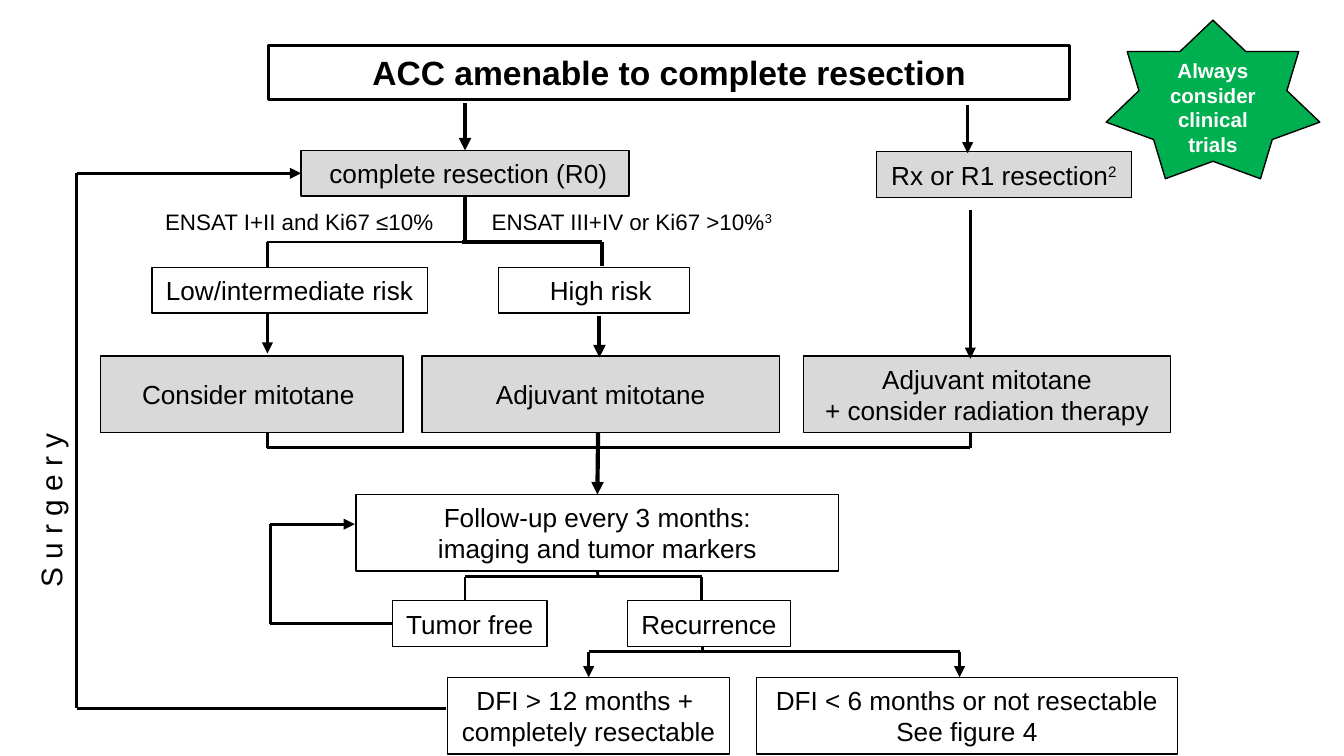
from dataclasses import dataclass
from typing import Any

from lxml.etree import SubElement
from pptx import Presentation
from pptx.dml.color import RGBColor
from pptx.enum.shapes import MSO_CONNECTOR as Connector, MSO_SHAPE as Shape
from pptx.enum.text import MSO_ANCHOR as Anchor, PP_ALIGN as Align
from pptx.oxml.ns import qn
from pptx.util import Inches, Pt

TOP, LEFT, BOTTOM = 0, 1, 2


@dataclass(frozen=True)
class Theme:
    """Colours, type sizes and line widths of the flow chart."""
    font: str = "Arial"
    ink: RGBColor = RGBColor(0, 0, 0)
    paper: RGBColor = RGBColor(255, 255, 255)
    grey: RGBColor = RGBColor(0xD9, 0xD9, 0xD9)
    green: RGBColor = RGBColor(0, 0xB0, 0x50)
    heading: float = 18
    side: float = 16
    body: float = 14
    label: float = 12
    badge: float = 11
    hairline: float = 0.75
    normal: float = 1.5
    heavy: float = 2.25


THEME = Theme()


def cells(count):
    """Turn grid cells, a tenth of an inch each, into a length."""
    return Inches(count / 10)


@dataclass
class Area:
    """A box on the slide grid; its parts are placed from its top left corner."""
    slide: Any
    left: float
    top: float
    width: float
    height: float

    def frame(self, x, y, width, height):
        """Give the slide position and size of a part."""
        return [cells(n) for n in (self.left + x, self.top + y, width, height)]

    def box(self, text, x, y, width, height, fill=THEME.paper, kind=Shape.RECTANGLE,
            line=THEME.hairline, wrap=False, **style):
        """Add a filled, outlined shape with centred text."""
        shape = self.slide.shapes.add_shape(kind, *self.frame(x, y, width, height))
        shape.shadow.inherit = False
        shape.fill.solid()
        shape.fill.fore_color.rgb = fill
        shape.line.color.rgb = THEME.ink
        shape.line.width = Pt(line)
        write(shape.text_frame, text, wrap, **style)
        return shape

    def label(self, text, x, y, width, height, **style):
        """Add a free-standing line of text."""
        shape = self.slide.shapes.add_textbox(*self.frame(x, y, width, height))
        write(shape.text_frame, text, False, align=Align.LEFT, **style)
        return shape

    def route(self, *points, weight=THEME.normal, arrow=False, start=None, end=None):
        """Join the points by straight lines, with an arrowhead at the last."""
        last = len(points) - 2
        for index, (first, second) in enumerate(zip(points, points[1:])):
            x1, y1 = self.frame(*first, 0, 0)[:2]
            x2, y2 = self.frame(*second, 0, 0)[:2]
            line = self.slide.shapes.add_connector(Connector.STRAIGHT, x1, y1, x2, y2)
            line.line.color.rgb = THEME.ink
            line.line.width = Pt(weight)
            if start and index == 0:
                line.begin_connect(*start)
            if end and index == last:
                line.end_connect(*end)
            if arrow and index == last:
                SubElement(line.line._get_or_add_ln(), qn("a:tailEnd"), type="triangle")
            SubElement(line._element.spPr, qn("a:effectLst"))


def write(frame, text, wrap, size=THEME.body, color=THEME.ink, bold=False, raised="",
          align=Align.CENTER, anchor=Anchor.MIDDLE):
    """Fill a text frame, one paragraph a line, with an optional raised mark."""
    frame.word_wrap = wrap
    frame.vertical_anchor = anchor
    for index, content in enumerate(text.split("\n")):
        paragraph = frame.paragraphs[0] if index == 0 else frame.add_paragraph()
        paragraph.alignment = align
        for part in filter(None, (content, raised)):
            run = paragraph.add_run()
            run.text = part
            run.font.name = THEME.font
            run.font.size = Pt(size)
            run.font.bold = bold
            run.font.color.rgb = color
            if part == raised:
                run.font._element.set("baseline", "30000")


def draw_resection(area):
    """Draw the heading and the two results of surgery; return the complete one."""
    area.box("ACC amenable to complete resection", 0, 0, 59.6, 4, line=THEME.normal,
             size=THEME.heading, bold=True)
    complete = area.box("complete resection (R0)", 2.4, 7.8, 24.4, 3.4, THEME.grey)
    complete.text_frame.margin_left = Inches(0.15)
    area.box("Rx or R1 resection", 45.2, 7.9, 19, 3.4, THEME.grey, raised="2")
    area.route((14.6, 4.3), (14.6, 7.8), weight=THEME.heavy, arrow=True, end=(complete, TOP))
    area.route((52, 4.4), (52, 8), arrow=True)
    return complete


def draw_risk(area, complete):
    """Split the complete resections into two risk groups."""
    area.label("ENSAT I+II and Ki67 ≤10%", 0, 0.4, 22.8, 3, size=THEME.label)
    area.label("ENSAT III+IV or Ki67 >10%", 24.3, 0.4, 23.2, 3, size=THEME.label, raised="3")
    area.box("Low/intermediate risk", 0, 5.3, 20.5, 3.4)
    high = area.box("High risk", 25.8, 5.3, 14.2, 3.4)
    high.text_frame.margin_left = Inches(0.2)
    area.route((23.3, 3.4), (8.6, 3.4), (8.6, 5.3))
    area.route((23.3, 0), (23.3, 3.4), weight=THEME.heavy, start=(complete, BOTTOM))
    area.route((23.1, 3.4), (33.5, 3.4), (33.5, 5.2), weight=THEME.heavy)


def draw_treatment(area):
    """Draw the three treatments, the arrows into them and the line below."""
    treatments = (("Consider mitotane ", 0, 22.5), ("Adjuvant mitotane", 23.9, 26.6),
                  ("Adjuvant mitotane\n+ consider radiation therapy", 52.3, 27.3))
    for text, x, width in treatments:
        area.box(text, x, 10.9, width, 5.7, THEME.grey, wrap=True)
    area.route((12.4, 7.6), (12.4, 10.7), arrow=True)
    area.route((37.1, 7.9), (37.1, 11), weight=THEME.heavy, arrow=True)
    area.route((64.7, 0), (64.7, 11.1), arrow=True)
    area.route((12.4, 16.6), (12.4, 17.7), (64.7, 17.7), (64.7, 16.6))


def draw_follow_up(area):
    """Draw the follow-up, its two findings and the way back to it."""
    follow_up = area.box("Follow-up every 3 months:\nimaging and tumor markers",
                         6.5, 4.6, 35.9, 5.7, wrap=True)
    tumor_free = area.box("Tumor free", 9.2, 12.5, 11.5, 3.4)
    area.box("Recurrence", 26.7, 12.5, 12.1, 3.4)
    area.route((24.5, 0), (24.5, 4.6), weight=THEME.heavy, arrow=True, end=(follow_up, TOP))
    area.route((24.5, 10.3), (24.5, 10.7), start=(follow_up, BOTTOM))
    area.route((14.6, 12.5), (14.6, 10.7), (32.2, 10.7), (32.2, 12.5))
    area.route((9.2, 14.2), (0.1, 14.2), (0.1, 6.8), (6.4, 6.8), arrow=True,
               start=(tumor_free, LEFT))


def draw_outcome(area):
    """Draw the two kinds of recurrence and the arrows into them."""
    resectable = area.box("DFI > 12 months + \ncompletely resectable", 0, 2.3, 21, 5.7)
    area.box("DFI < 6 months or not resectable\nSee figure 4", 23, 2.3, 31.3, 5.7)
    area.route((19, 0), (19, 0.4))
    area.route((10.5, 0.4), (10.5, 2.3), arrow=True, end=(resectable, TOP))
    area.route((10.5, 0.4), (38.1, 0.4), (38.1, 2.3), arrow=True)


def draw_surgery(area, complete):
    """Draw the loop that leads back to the complete resection."""
    area.route((area.width, area.height), (2.6, area.height), (2.6, 0), (19.3, 0),
               arrow=True, end=(complete, LEFT))
    area.label("S u r g e r y", -6.2, 23.1, 13.7, 3.7, size=THEME.side).rotation = 270


def draw_badge(area):
    """Draw the star with the reminder across the whole area."""
    area.box("Always consider clinical trials", 0, 0, area.width, area.height, THEME.green,
             Shape.STAR_7_POINT, wrap=True, size=THEME.badge, color=THEME.paper, bold=True,
             anchor=Anchor.TOP)


def main():
    """Build the flow chart slide."""
    presentation = Presentation()
    presentation.slide_width = Inches(10)
    presentation.slide_height = presentation.slide_width * 9 // 16
    slide = presentation.slides.add_slide(presentation.slide_layouts[6])
    complete = draw_resection(Area(slide, 20, 3.4, 64.2, 11.3))
    draw_risk(Area(slide, 11.3, 14.6, 47.5, 8.7), complete)
    draw_treatment(Area(slide, 7.5, 15.6, 79.6, 17.7))
    draw_follow_up(Area(slide, 20, 32.2, 42.4, 15.9))
    draw_outcome(Area(slide, 33.3, 48.1, 54.3, 8))
    draw_surgery(Area(slide, 3.1, 12.9, 30.1, 39.8), complete)
    draw_badge(Area(slide, 82.3, 1.5, 15.9, 11.8))
    presentation.save("out.pptx")


if __name__ == "__main__":
    main()
